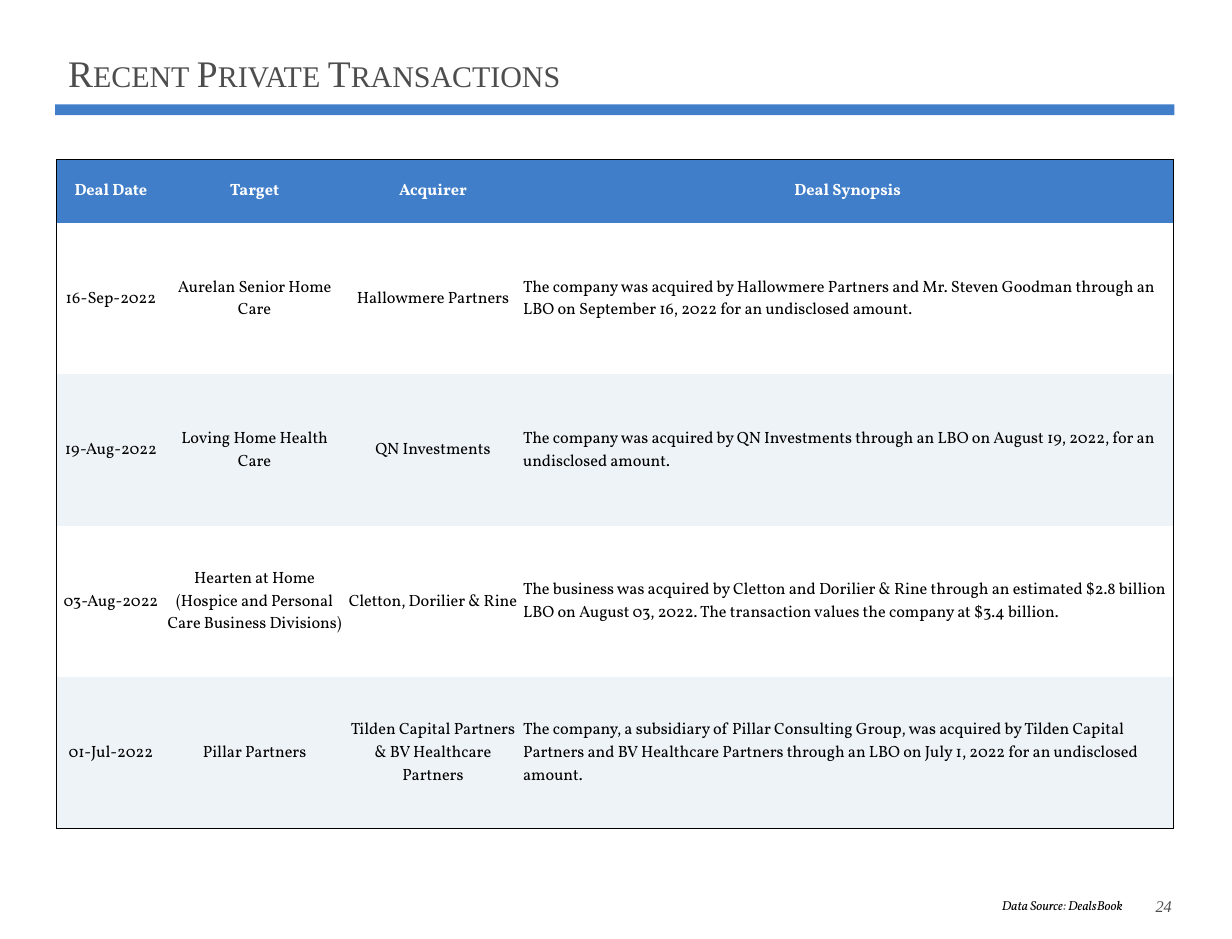
import pptx
import pptx.util
import pptx.dml.color
import pptx.enum.shapes
import pptx.enum.text
import pptx.oxml.ns
from lxml import etree

Inches, Pt = pptx.util.Inches, pptx.util.Pt
RGBColor = pptx.dml.color.RGBColor
ALIGN = pptx.enum.text.PP_ALIGN
ANCHOR = pptx.enum.text.MSO_ANCHOR

BLUE = RGBColor(0x40, 0x7E, 0xC9)
PALE = RGBColor(0xEE, 0xF3, 0xF8)
GREY = RGBColor(0x4D, 0x4D, 0x4D)
BLACK = RGBColor(0, 0, 0)
WHITE = RGBColor(255, 255, 255)
BODY_FONT, SERIF_FONT = "Vollkorn", "Times New Roman"

TITLE = "Recent Private Transactions"
SOURCE_NOTE = "Data Source: DealsBook"
PAGE_NUMBER = "24"
HEADINGS = ("Deal Date", "Target", "Acquirer", "Deal Synopsis")
DEALS = [
    ("16-Sep-2022", "Aurelan Senior Home Care", "Hallowmere Partners",
     "The company was acquired by Hallowmere Partners and Mr. Steven Goodman "
     "through an LBO on September 16, 2022 for an undisclosed amount."),
    ("19-Aug-2022", "Loving Home Health Care", "QN Investments",
     "The company was acquired by QN Investments through an LBO on "
     "August 19, 2022, for an undisclosed amount."),
    ("03-Aug-2022",
     "Hearten at Home (Hospice and Personal Care Business Divisions)",
     "Cletton, Dorilier & Rine",
     "The business was acquired by Cletton and Dorilier & Rine through an "
     "estimated $2.8 billion LBO on August 03, 2022. The transaction values "
     "the company at $3.4 billion."),
    ("01-Jul-2022", "Pillar Partners",
     "Tilden Capital Partners & BV Healthcare Partners",
     "The company, a subsidiary of Pillar Consulting Group, was acquired by "
     "Tilden Capital Partners and BV Healthcare Partners through an LBO on "
     "July 1, 2022 for an undisclosed amount."),
]

SLIDE_W, SLIDE_H = 10.5, 8
TABLE_LEFT, TABLE_TOP = 0.48, 1.36
COLUMN_WIDTHS = (0.93, 1.52, 1.52, 5.55)
HEADING_H, DEAL_H = 0.54, 1.29


def write(frame, text, font=BODY_FONT, size=10, color=BLACK, bold=False,
          italic=False, small_caps=False, align=ALIGN.LEFT):
    paragraph = frame.paragraphs[0]
    paragraph.alignment = align
    run = paragraph.add_run()
    run.text = text
    run.font.name = font
    run.font.size = Pt(size)
    run.font.color.rgb = color
    run.font.bold = bold
    run.font.italic = italic
    if small_caps:
        run.font._element.set("cap", "small")


def set_borders(cell, drawn):
    """Draw a thin black line on the sides in drawn (of L, R, T, B), none elsewhere."""
    properties = cell._tc.get_or_add_tcPr()
    for position, side in enumerate("LRTB"):
        line = etree.Element(pptx.oxml.ns.qn(f"a:ln{side}"), w=str(Pt(0.5)))
        properties.insert(position, line)
        if side in drawn:
            fill = etree.SubElement(line, pptx.oxml.ns.qn("a:solidFill"))
            etree.SubElement(fill, pptx.oxml.ns.qn("a:srgbClr"), val=str(BLACK))
        else:
            etree.SubElement(line, pptx.oxml.ns.qn("a:noFill"))


def add_note(slide, text, left, top, width, height, **text_format):
    note = slide.shapes.add_textbox(*map(Inches, (left, top, width, height)))
    note.text_frame.word_wrap = True
    write(note.text_frame, text, italic=True, **text_format)


def add_title(slide):
    title = slide.shapes.title
    title.left, title.top, title.width, title.height = map(
        Inches, (0.48, 0.38, 9.55, 0.48))
    title.text_frame.vertical_anchor = ANCHOR.BOTTOM
    title.text_frame.word_wrap = True
    write(title.text_frame, TITLE, font=SERIF_FONT, size=23, color=GREY,
          small_caps=True)

    rule = slide.shapes.add_shape(pptx.enum.shapes.MSO_SHAPE.RECTANGLE,
                                  *map(Inches, (0.47, 0.89, 9.54, 0.09)))
    rule.shadow.inherit = False
    rule.fill.solid()
    rule.fill.fore_color.rgb = BLUE
    rule.line.fill.background()


def add_deals(slide):
    rows = [HEADINGS] + DEALS
    heights = [HEADING_H] + [DEAL_H] * len(DEALS)
    last_row, last_column = len(rows) - 1, len(HEADINGS) - 1
    table = slide.shapes.add_table(
        len(rows), len(HEADINGS), Inches(TABLE_LEFT), Inches(TABLE_TOP),
        Inches(sum(COLUMN_WIDTHS)), Inches(sum(heights))).table
    for column, width in zip(table.columns, COLUMN_WIDTHS):
        column.width = Inches(width)

    for r, (texts, height) in enumerate(zip(rows, heights)):
        table.rows[r].height = Inches(height)
        heading = r == 0
        row_fill = BLUE if heading else (WHITE if r % 2 else PALE)
        for c, text in enumerate(texts):
            cell = table.cell(r, c)
            cell.margin_left = cell.margin_right = cell.margin_top = Inches(0.01)
            cell.margin_bottom = 0
            cell.vertical_anchor = ANCHOR.MIDDLE
            cell.fill.solid()
            cell.fill.fore_color.rgb = row_fill
            edges = {"L": c == 0, "R": c == last_column,
                     "T": heading, "B": r == last_row}
            set_borders(cell, [side for side, outer in edges.items() if outer])
            centred = heading or c < last_column
            write(cell.text_frame, text, bold=heading,
                  color=WHITE if heading else BLACK,
                  align=ALIGN.CENTER if centred else ALIGN.LEFT)


def main():
    deck = pptx.Presentation()
    deck.slide_width, deck.slide_height = Inches(SLIDE_W), Inches(SLIDE_H)
    slide = deck.slides.add_slide(deck.slide_layouts[5])
    add_title(slide)
    add_deals(slide)
    add_note(slide, SOURCE_NOTE, 8.44, 7.6, 1.74, 0.24, size=8)
    add_note(slide, PAGE_NUMBER, 9.75, 7.59, 0.65, 0.26,
             font=SERIF_FONT, color=GREY)
    deck.save("out.pptx")


if __name__ == "__main__":
    main()
